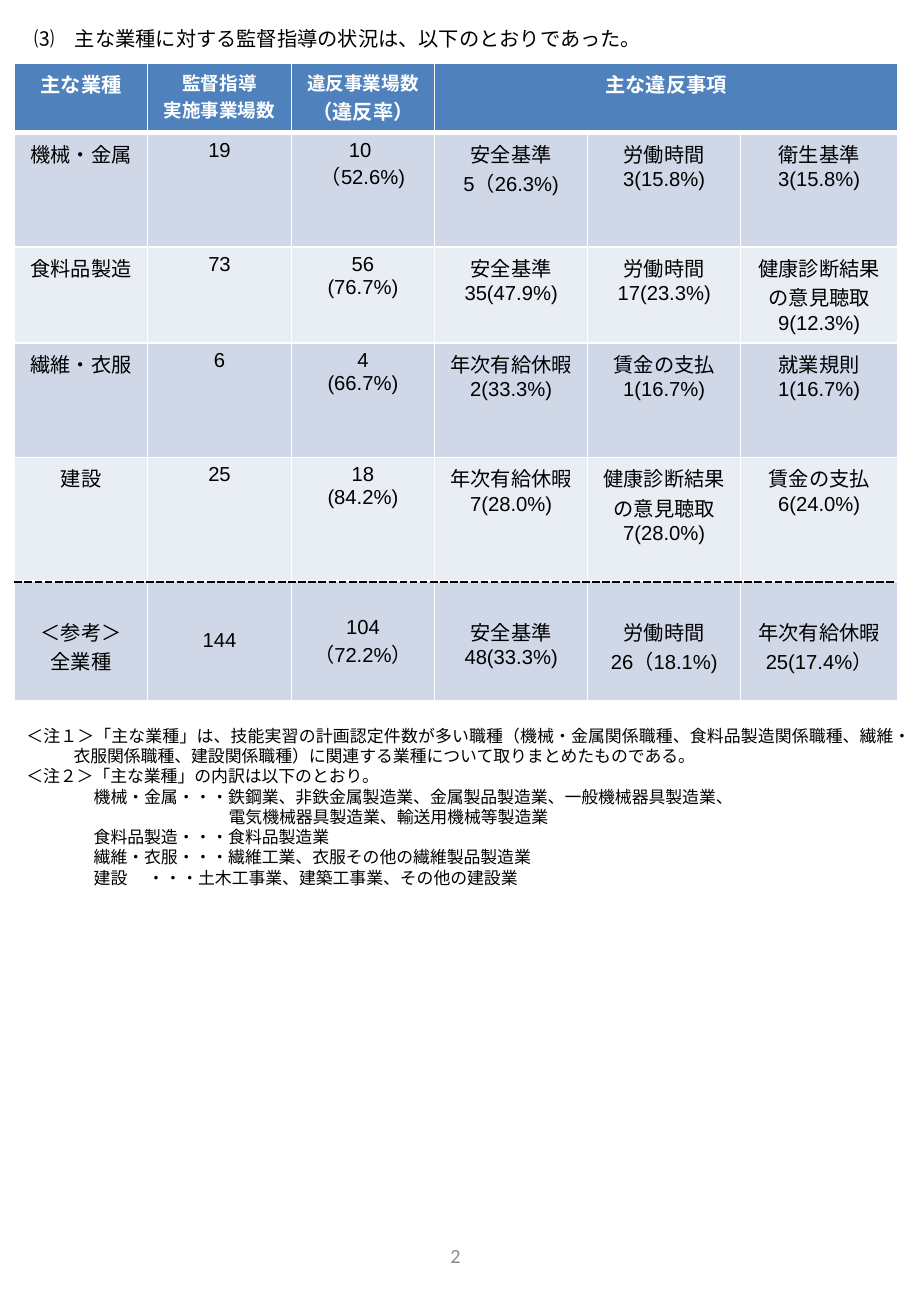
from lxml import etree
from pptx import Presentation
from pptx.dml.color import RGBColor
from pptx.enum import dml, lang, shapes, text
from pptx.oxml.ns import qn
from pptx.util import Cm, Pt

COLORS = {"ink": "000000", "white": "FFFFFF", "header": "4F81BD",
          "odd": "D0D8E8", "even": "E9EDF4", "number": "8C8C8C"}
CJK = "Noto Sans CJK JP"

TITLE = "⑶　主な業種に対する監督指導の状況は、以下のとおりであった。"
HEADER = ["主な業種", "監督指導\n実施事業場数", "違反事業場数\n（違反率）", "主な違反事項"]
HEADER_SIZES = [[12], [11, 11], [11, 12], [12]]
ROWS = [
    ["機械・金属", "19", "10 \n（52.6%)", "安全基準\n5（26.3%)",
     "労働時間\n3(15.8%)", "衛生基準3(15.8%)"],
    ["食料品製造", "73", "56\n(76.7%)", "安全基準\n35(47.9%)",
     "労働時間\n17(23.3%)", "健康診断結果の意見聴取9(12.3%)"],
    ["繊維・衣服", "6", "4\n(66.7%)", "年次有給休暇2(33.3%)",
     "賃金の支払\n1(16.7%)", "就業規則1(16.7%)"],
    ["建設", "25", "18\n(84.2%)", "年次有給休暇7(28.0%)",
     "健康診断結果の意見聴取\n7(28.0%)", "賃金の支払6(24.0%)"],
    ["＜参考＞\n全業種", "144", "104\n（72.2%）", "安全基準\n48(33.3%)",
     "労働時間\n26（18.1%)", "年次有給休暇25(17.4%）"],
]
COLUMN_WIDTHS = [2.79, 3, 3, 3.2, 3.2, 3.28]
ROW_HEIGHTS = [1.45, 2.39, 2.01, 2.39, 2.59, 2.49]

# Left margin and first-line indent in points, then the wording
NOTES = [
    (28, -28, "＜注１＞「主な業種」は、技能実習の計画認定件数が多い職種（機械・金属関係職種、"
              "食料品製造関係職種、繊維・衣服関係職種、建設関係職種）に関連する業種について"
              "取りまとめたものである。"),
    (28, -28, "＜注２＞「主な業種」の内訳は以下のとおり。"),
    (0, 40, "機械・金属・・・鉄鋼業、非鉄金属製造業、金属製品製造業、一般機械器具製造業、"),
    (0, 120, "電気機械器具製造業、輸送用機械等製造業"),
    (0, 40, "食料品製造・・・食料品製造業"),
    (0, 40, "繊維・衣服・・・繊維工業、衣服その他の繊維製品製造業"),
    (0, 40, "建設\t・・・土木工事業、建築工事業、その他の建設業"),
]
NOTE_TAB = 90


def rgb(name):
    return RGBColor.from_string(COLORS[name])


def format_para(para, size, font, color, align, bold=False):
    para.alignment = align
    for span in para.runs:
        span.font.size = Pt(size)
        span.font.name = font
        span.font.bold = bold
        span.font.color.rgb = rgb(color)
        span.font.language_id = lang.MSO_LANGUAGE_ID.JAPANESE
        latin = span.font._element.find(qn("a:latin"))
        latin.addnext(latin.makeelement(qn("a:ea"), {"typeface": CJK}))


def indent_para(para, margin, first):
    """Set the left margin and the first-line indent, in points."""
    props = para._p.get_or_add_pPr()
    props.set("marL", str(Pt(margin)))
    props.set("indent", str(Pt(first)))
    return props


def add_text(page, left, top, width, height, wording):
    box = page.shapes.add_textbox(Cm(left), Cm(top), Cm(width), Cm(height))
    box.text_frame.word_wrap = True
    box.text_frame.text = wording
    return box.text_frame


def add_title(page, left, top, width, height):
    para = add_text(page, left, top, width, height, TITLE).paragraphs[0]
    format_para(para, 12, CJK, "ink", text.PP_ALIGN.JUSTIFY)
    indent_para(para, 0, 12)


def add_notes(page, left, top, width, height):
    wording = "\n".join(note[2] for note in NOTES)
    frame = add_text(page, left, top, width, height, wording)
    for para, (margin, first, line) in zip(frame.paragraphs, NOTES):
        format_para(para, 10, CJK, "ink", text.PP_ALIGN.JUSTIFY)
        props = indent_para(para, margin, first)
        if "\t" in line:
            stops = etree.SubElement(props, qn("a:tabLst"))
            etree.SubElement(stops, qn("a:tab"), pos=str(Pt(NOTE_TAB)), algn="l")


def add_borders(cell, top, bottom):
    """Draw white cell borders; top and bottom are widths in points."""
    props = cell._tc.get_or_add_tcPr()
    sides = {"a:lnL": 1, "a:lnR": 1, "a:lnT": top, "a:lnB": bottom}
    for tag, width in sides.items():
        line = etree.SubElement(props, qn(tag), w=str(Pt(width)))
        fill = etree.SubElement(line, qn("a:solidFill"))
        etree.SubElement(fill, qn("a:srgbClr"), val=COLORS["white"])


def add_industry_table(page, left, top):
    frame = page.shapes.add_table(
        len(ROW_HEIGHTS), len(COLUMN_WIDTHS), Cm(left), Cm(top),
        Cm(sum(COLUMN_WIDTHS)), Cm(sum(ROW_HEIGHTS)))
    table = frame.table
    for column, width in zip(table.columns, COLUMN_WIDTHS):
        column.width = Cm(width)
    for row, height in zip(table.rows, ROW_HEIGHTS):
        row.height = Cm(height)
    table.cell(0, 3).merge(table.cell(0, 5))

    last = len(ROWS)
    for r, row in enumerate(table.rows):
        for c, cell in enumerate(row.cells):
            add_borders(cell, 3 if r == 1 else 1, 3 if r == 0 else 1)
            cell.fill.solid()
            band = "header" if r == 0 else "odd" if r % 2 else "even"
            cell.fill.fore_color.rgb = rgb(band)
            if cell.is_spanned:
                continue
            cell.text_frame.text = HEADER[c] if r == 0 else ROWS[r - 1][c]
            for i, para in enumerate(cell.text_frame.paragraphs):
                if r == 0:
                    format_para(para, HEADER_SIZES[c][i], "Calibri", "white",
                                text.PP_ALIGN.CENTER, True)
                else:
                    format_para(para, 12, "Arial", "ink", text.PP_ALIGN.CENTER)
            if r == last and c == 1:
                cell.vertical_anchor = text.MSO_ANCHOR.MIDDLE
            elif r == last:
                cell.margin_top = Cm(0.74)


def add_reference_divider(page, left, top, width):
    line = page.shapes.add_connector(
        shapes.MSO_CONNECTOR.STRAIGHT, Cm(left), Cm(top), Cm(left + width), Cm(top))
    line.line.color.rgb = rgb("ink")
    line.line.width = Pt(1.5)
    line.line.dash_style = dml.MSO_LINE.SQUARE_DOT
    etree.SubElement(line._element.spPr, qn("a:effectLst"))


def add_page_number(page, left, top, width, height):
    frame = add_text(page, left, top, width, height, "2")
    frame.vertical_anchor = text.MSO_ANCHOR.MIDDLE
    format_para(frame.paragraphs[0], 12, "Calibri", "number", text.PP_ALIGN.CENTER)


def main():
    deck = Presentation()
    deck.slide_width, deck.slide_height = Cm(19.05), Cm(27.51)
    page = deck.slides.add_slide(deck.slide_layouts[6])
    add_notes(page, 0.3, 15.04, 19, 3.68)
    add_title(page, 0.05, 0.43, 19.02, 0.76)
    add_industry_table(page, 0.3, 1.32)
    add_reference_divider(page, 0.3, 12.17, 18.42)
    add_page_number(page, 6.5, 25.5, 6.05, 1.47)
    deck.save("out.pptx")


if __name__ == "__main__":
    main()
